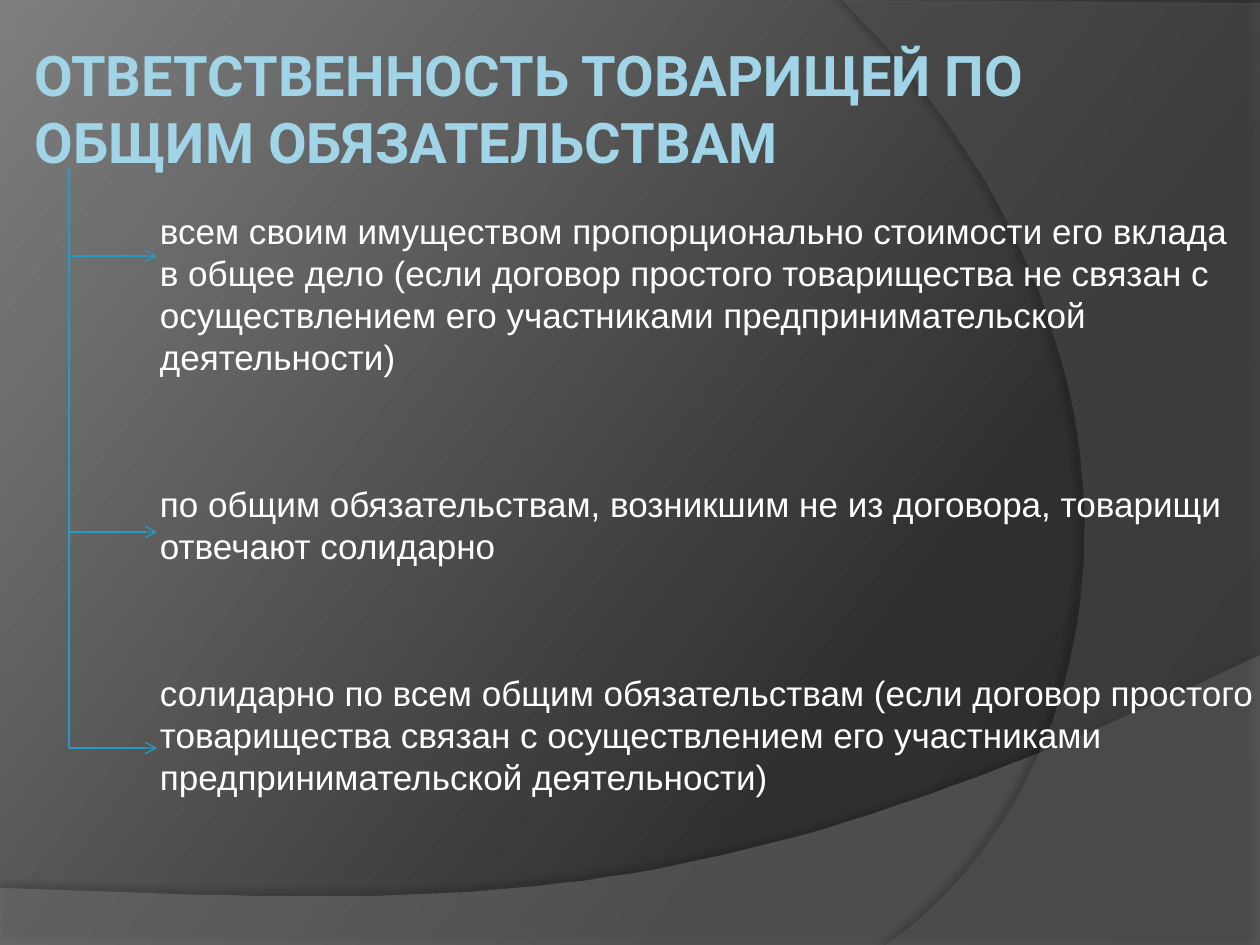
from copy import deepcopy

from lxml.etree import SubElement
from pptx import Presentation
from pptx.dml.color import RGBColor
from pptx.enum.shapes import MSO_CONNECTOR
from pptx.enum.text import MSO_ANCHOR
from pptx.oxml.ns import qn
from pptx.util import Pt

PX = 7257  # EMU in one px, 126 px to the inch


def paint(color, value):
    color.rgb = RGBColor.from_string(value)


def add_text(page, bounds, frame_format, paragraphs, para_format, font_format, color):
    box = page.shapes.add_textbox(*[n * PX for n in bounds])
    frame = box.text_frame
    for name, value in frame_format.items():
        setattr(frame, name, value)
    for index, text in enumerate(paragraphs):
        para = frame.add_paragraph() if index else frame.paragraphs[0]
        for name, value in para_format.items():
            setattr(para, name, value)
        if index == 0:
            para.space_before = Pt(0)
        span = para.add_run()
        span.text = text
        for name, value in font_format.items():
            setattr(span.font, name, value)
        paint(span.font.color, color)


deck = Presentation()
deck.slide_width, deck.slide_height = 1260 * PX, 945 * PX
page = deck.slides.add_slide(deck.slide_layouts[6])

# Background gradient, light at the upper left
backdrop = page.background.fill
backdrop.gradient()
backdrop.gradient_angle = 143
first_stop = backdrop.gradient_stops[0]._gs
first_stop.addnext(deepcopy(first_stop))
stops = [(0, "282828"), (0.3, "2F2F2F"), (1, "7E7E7E")]
for stop, (position, color) in zip(backdrop.gradient_stops, stops):
    stop.position = position
    paint(stop.color, color)

# Translucent waves: straight corners, then one Bezier curve
waves = [
    {"corners": [(0, 888), (0, 946), (1260, 946), (1260, 655)],
     "curve": [(1260, 655), (704, 919), (493, 906), (0, 888)],
     "fill": "7F7F7F", "alpha": 45, "shadow": 35, "distance": 3.5, "angle": 270},
    {"corners": [(1260, 3), (1260, 945), (886, 945)],
     "curve": [(886, 945), (1123, 780), (1193, 347), (842, 0)],
     "fill": "5E5E5E", "alpha": 40, "shadow": 45, "distance": 4, "angle": 180},
]
STEPS = 48
for wave in waves:
    points = list(wave["corners"])
    for step in range(1, STEPS + 1):
        t = step / STEPS
        weights = [(1 - t) ** 3, 3 * t * (1 - t) ** 2, 3 * t * t * (1 - t), t ** 3]
        points.append(tuple(sum(w * p[axis] for w, p in zip(weights, wave["curve"]))
                            for axis in (0, 1)))
    builder = page.shapes.build_freeform(*points[0], scale=PX)
    builder.add_line_segments(points[1:], close=True)
    shape = builder.convert_to_shape()
    shape.line.fill.background()
    shape.fill.solid()
    paint(shape.fill.fore_color, wave["fill"])
    tint = shape._element.spPr.find(qn("a:solidFill"))[0]
    SubElement(tint, qn("a:alpha"), val=str(wave["alpha"] * 1000))
    effects = SubElement(shape._element.spPr, qn("a:effectLst"))
    shadow = SubElement(effects, qn("a:outerShdw"), blurRad=str(Pt(4)),
                        dist=str(Pt(wave["distance"])), dir=str(wave["angle"] * 60000),
                        algn="ctr", rotWithShape="0")
    shade = SubElement(shadow, qn("a:srgbClr"), val="000000")
    SubElement(shade, qn("a:alpha"), val=str(wave["shadow"] * 1000))

# Title
add_text(
    page, (29, 29, 1074, 168),
    {"word_wrap": True, "vertical_anchor": MSO_ANCHOR.TOP, "margin_left": 6 * PX,
     "margin_right": 6 * PX, "margin_top": 11 * PX, "margin_bottom": 6 * PX},
    ["ОТВЕТСТВЕННОСТЬ ТОВАРИЩЕЙ ПО ОБЩИМ ОБЯЗАТЕЛЬСТВАМ"], {},
    {"name": "Roboto", "size": Pt(32), "bold": True}, "A1D4E7")

# Three kinds of liability
add_text(
    page, (147, 197, 1113, 601),
    {"word_wrap": True, "vertical_anchor": MSO_ANCHOR.BOTTOM, "margin_left": 13 * PX,
     "margin_right": 6 * PX, "margin_top": 0, "margin_bottom": 0},
    ["всем своим имуществом пропорционально стоимости его вклада в общее дело "
     "(если договор простого товарищества не связан с осуществлением его "
     "участниками предпринимательской деятельности)",
     "по общим обязательствам, возникшим не из договора, товарищи отвечают солидарно",
     "солидарно по всем общим обязательствам (если договор простого товарищества "
     "связан с осуществлением его участниками предпринимательской деятельности)"],
    {"line_spacing": Pt(24), "space_before": Pt(60)},
    {"name": "Arial", "size": Pt(20)}, "FFFFFF")

# Trunk line and its arrows
TRUNK, TIP, BOTTOM = 69, 157, 748
lines = [(TRUNK, 167, TRUNK, BOTTOM)]
lines += [(TRUNK, y, TIP, y) for y in (256, 532, BOTTOM)]
for ends in lines:
    connector = page.shapes.add_connector(MSO_CONNECTOR.STRAIGHT, *[n * PX for n in ends])
    connector.line.width = Pt(0.75)
    paint(connector.line.color, "239BC2")
    if ends[0] != ends[2]:
        SubElement(connector.line._get_or_add_ln(), qn("a:tailEnd"), type="arrow")
    SubElement(connector._element.spPr, qn("a:effectLst"))

deck.save("out.pptx")
